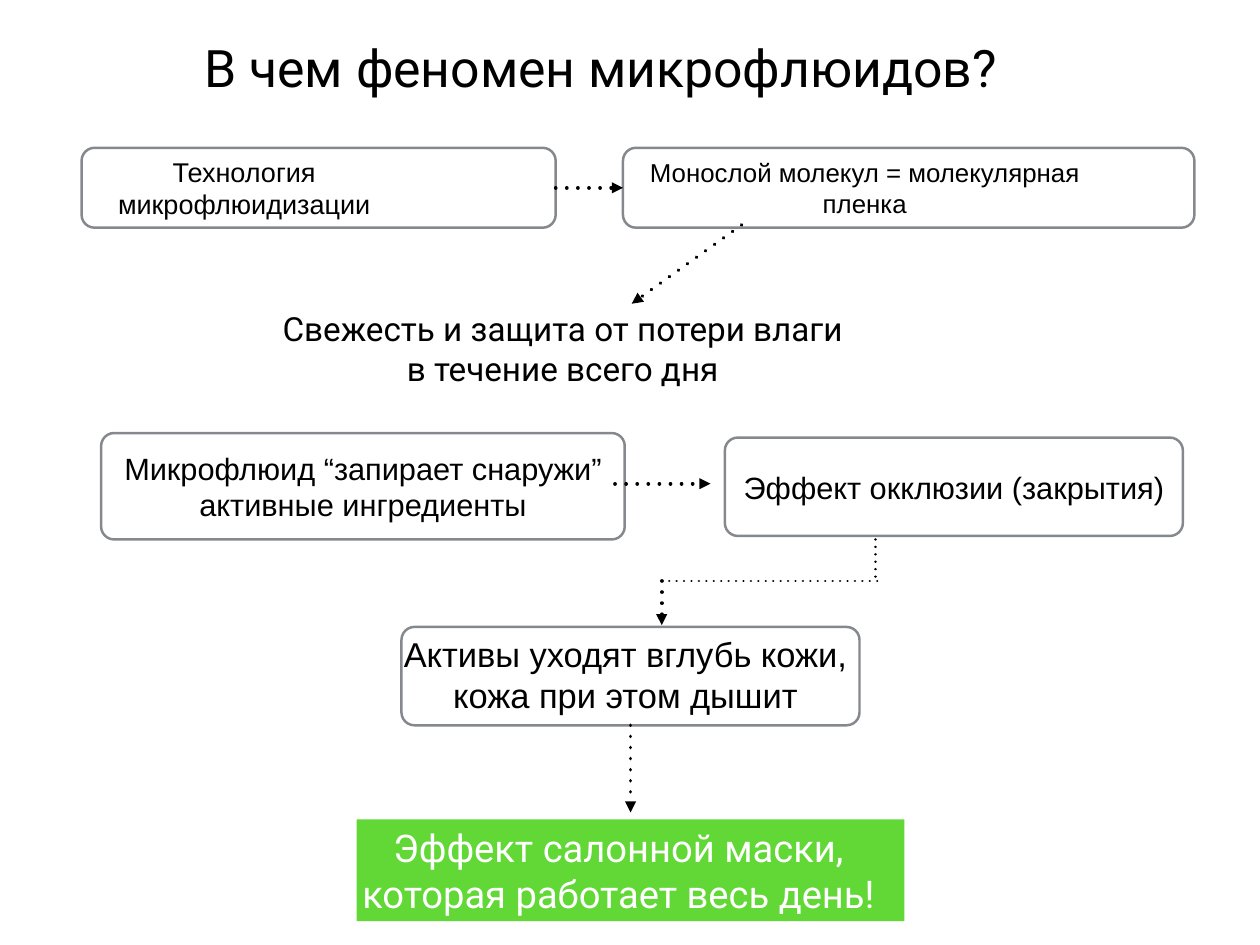
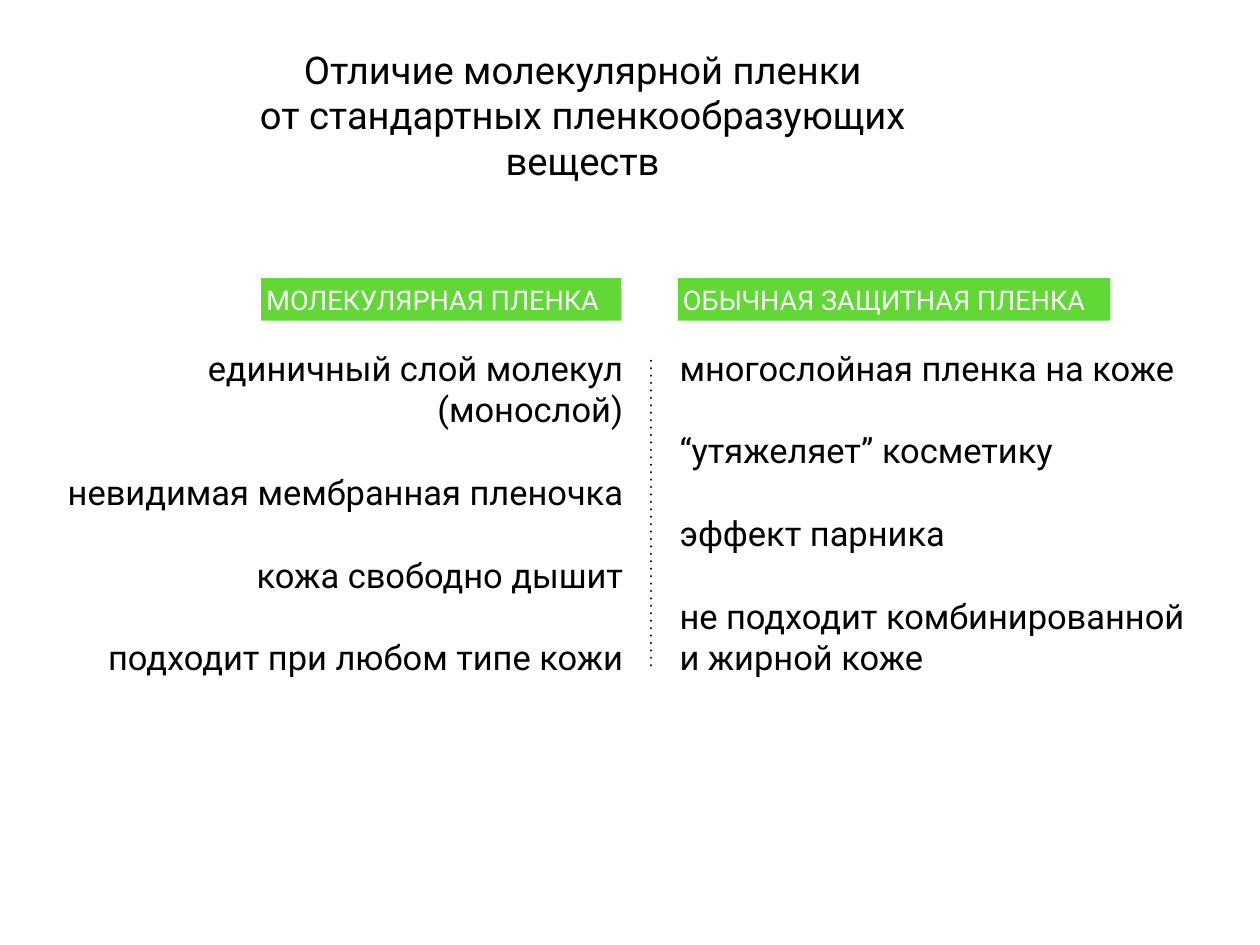
from lxml.etree import SubElement
from pptx import Presentation
from pptx.dml.color import RGBColor
from pptx.enum.shapes import MSO_CONNECTOR as Link, MSO_SHAPE as Form
from pptx.enum.text import MSO_ANCHOR as Anchor, PP_ALIGN as Align
from pptx.oxml.ns import qn
from pptx.util import Cm, Pt

BLACK, WHITE, GREY, GREEN = "000000", "FFFFFF", "85888D", "61D836"
INSET = 0.15
RADIUS = 0.37


def color(value):
    return RGBColor.from_string(value)


def write(shape, text, size, font="Roboto", ink=BLACK, align=Align.CENTER,
          left=INSET, right=INSET, gap=0):
    frame = shape.text_frame
    frame.word_wrap = True
    frame.vertical_anchor = Anchor.MIDDLE
    frame.margin_left, frame.margin_right = Cm(left), Cm(right)
    frame.margin_top = frame.margin_bottom = Cm(INSET)
    frame.text = text
    for index, para in enumerate(frame.paragraphs):
        para.alignment = align
        if index and gap:
            para.space_before = Pt(gap)
        for span in para.runs:
            span.font.name = font
            span.font.size = Pt(size)
            span.font.color.rgb = color(ink)


def add_text(page, box, text, size, **style):
    shape = page.shapes.add_textbox(*map(Cm, box))
    write(shape, text, size, **style)


def add_frame(page, box):
    shape = page.shapes.add_shape(Form.ROUNDED_RECTANGLE, *map(Cm, box))
    shape.shadow.inherit = False
    shape.adjustments[0] = RADIUS / min(box[2:])
    shape.fill.background()
    shape.line.color.rgb = color(GREY)
    shape.line.width = Pt(2)
    return shape


def add_step(page, box, text, size, **style):
    shape = add_frame(page, box)
    write(shape, text, size, font="Arial", **style)
    return shape


def add_band(page, box, text, size, **style):
    shape = page.shapes.add_shape(Form.RECTANGLE, *map(Cm, box))
    shape.shadow.inherit = False
    shape.fill.solid()
    shape.fill.fore_color.rgb = color(GREEN)
    shape.line.fill.background()
    write(shape, text, size, ink=WHITE, **style)


def add_dots(page, start, end, arrow=True):
    line = page.shapes.add_connector(Link.STRAIGHT, *map(Cm, start + end))
    line.line.color.rgb = color(BLACK)
    line.line.width = Pt(3 if arrow else 2)
    outline = line.line._get_or_add_ln()
    outline.set("cap", "rnd")
    dash = SubElement(outline, qn("a:custDash"))
    SubElement(dash, qn("a:ds"), d="100000", sp="200000")
    if arrow:
        SubElement(outline, qn("a:tailEnd"), type="triangle")
    SubElement(line._element.spPr, qn("a:effectLst"))
    return line


def film_region(page, left, top, width):
    height, source_width, film_width = 2.29, 13.59, 16.38
    film_left = left + width - film_width
    middle = top + height / 2
    source = add_step(page, (left, top, source_width, height),
                      "Технология микрофлюидизации", 22, right=4.42)
    film = add_step(page, (film_left, top, film_width, height),
                    "Монослой молекул = молекулярная пленка", 21, right=2.67)
    arrow = add_dots(page, (left + source_width, middle), (film_left, middle))
    arrow.begin_connect(source, 3)
    arrow.end_connect(film, 1)
    add_dots(page, (film_left + 3.4, top + 2.21), (film_left + 0.25, top + 4.47))
    add_text(page, (left + 4.79, top + 4.45, 18, 2.59),
             "Свежесть и защита от потери влаги\nв течение всего дня", 27)


def occlusion_region(page, left, top):
    step_width, step_height = 13.13, 2.82
    add_step(page, (left, top, 15.01, 3.05),
             "Микрофлюид “запирает снаружи”\nактивные ингредиенты", 25)
    add_step(page, (left + 17.88, top + 0.13, step_width, step_height),
             "Эффект окклюзии (закрытия)", 25)
    add_dots(page, (left + 14.73, top + 1.45), (left + 17.47, top + 1.45))

    bend, drop, rise = top + 4.24, left + 16.07, left + 22.2
    add_dots(page, (rise, top + 3.05), (rise, bend - 0.12), arrow=False)
    add_dots(page, (drop, bend), (rise + 0.07, bend), arrow=False)
    add_dots(page, (drop, bend), (drop, bend + 1.27))

    skin_left, skin_top = left + 8.61, top + 5.56
    skin = add_frame(page, (skin_left, skin_top, step_width, step_height))
    add_text(page, (skin_left - 0.58, skin_top - 0.05, 14, step_height),
             "Активы уходят вглубь кожи,\nкожа при этом дышит", 28,
             font="Arial")
    center, bottom = skin_left + step_width / 2, skin_top + step_height
    arrow = add_dots(page, (center, bottom), (center, bottom + 2.5))
    arrow.begin_connect(skin, 2)
    add_band(page, (center - 7.85, bottom + 2.7, 15.7, 2.92),
             "Эффект салонной маски,\nкоторая работает весь день!", 31,
             left=0, right=0.7)


def comparison_column(page, left, width, top, label_left, label_width,
                      label, items, align):
    add_band(page, (label_left, top, label_width, 1.22), label, 22,
             align=Align.LEFT)
    add_text(page, (left, top + 1.78, width, 9.86), "\n".join(items), 28,
             align=align, gap=33.6)


def comparison_region(page, left, top):
    comparison_column(
        page, left, 16.54, top, left + 6.02, 10.31, "МОЛЕКУЛЯРНАЯ ПЛЕНКА",
        ["единичный слой молекул\v(монослой)", "невидимая мембранная пленочка",
         "кожа свободно дышит", "подходит при любом типе кожи"], Align.RIGHT)
    comparison_column(
        page, left + 17.86, 15.32, top, left + 17.96, 12.4,
        "ОБЫЧНАЯ ЗАЩИТНАЯ ПЛЕНКА",
        ["многослойная пленка на коже", "“утяжеляет” косметику",
         "эффект парника", "не подходит комбинированной\vи жирной коже"],
        Align.LEFT)
    divider = left + 17.2
    add_dots(page, (divider, top + 11.1), (divider, top + 2.34), arrow=False)


def main():
    deck = Presentation()
    deck.slide_width, deck.slide_height = Cm(36.12), Cm(27.1)
    blank = deck.slide_layouts[6]

    phenomenon = deck.slides.add_slide(blank)
    add_text(phenomenon, (4.52, 0.91, 25.4, 2.03),
             "В чем феномен микрофлюидов?", 42)
    film_region(phenomenon, 2.34, 4.24, 31.9)
    occlusion_region(phenomenon, 2.9, 12.42)

    difference = deck.slides.add_slide(blank)
    add_text(difference, (6.7, 1.83, 20, 2.92),
             "Отличие молекулярной пленки\n"
             "от стандартных пленкообразующих веществ", 31)
    comparison_region(difference, 1.47, 7.98)

    deck.save("out.pptx")


if __name__ == "__main__":
    main()
